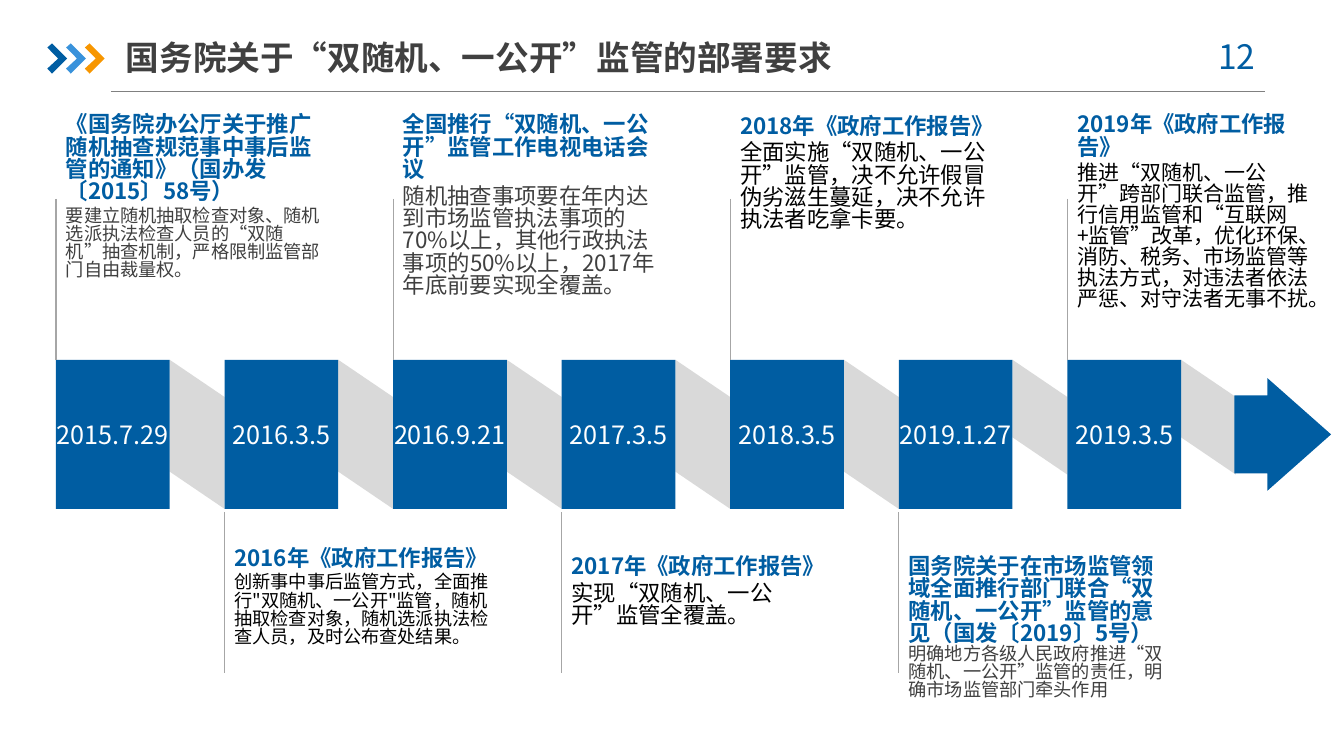
import pptx
import pptx.util
import pptx.dml.color
import pptx.enum.text
import pptx.enum.shapes
import pptx.oxml.ns
from lxml import etree

Pt = pptx.util.Pt
RGB = pptx.dml.color.RGBColor
SHAPE = pptx.enum.shapes.MSO_SHAPE
ALIGN = pptx.enum.text.PP_ALIGN
ANCHOR = pptx.enum.text.MSO_ANCHOR
qn = pptx.oxml.ns.qn

BLUE = RGB(0x00, 0x5D, 0xA2)
SKY = RGB(0x39, 0x92, 0xDB)
ORANGE = RGB(0xF7, 0x96, 0x00)
BAND = RGB(0xD9, 0xD9, 0xD9)
RULE = RGB(0x80, 0x80, 0x80)
STEM = RGB(0xA6, 0xA6, 0xA6)
DARK = RGB(0x40, 0x40, 0x40)
BLACK = RGB(0x00, 0x00, 0x00)
WHITE = RGB(0xFF, 0xFF, 0xFF)
FONT = "Noto Sans CJK SC"

TITLE = "国务院关于“双随机、一公开”监管的部署要求"
PAGE = "12"

# date, heading, body, body size, body colour, note (top, width, height), body on its own line
EVENTS = [
    ("2015.7.29", "《国务院办公厅关于推广随机抽查规范事中事后监管的通知》（国办发〔2015〕58号）",
     "要建立随机抽取检查对象、随机选派执法检查人员的“双随机”抽查机制，严格限制监管部门自由裁量权。",
     13, DARK, (77, 201.6, 170), True),
    ("2016.3.5", "2016年《政府工作报告》",
     "创新事中事后监管方式，全面推行\"双随机、一公开\"监管，随机抽取检查对象，"
     "随机选派执法检查人员，及时公布查处结果。",
     13, BLACK, (386.6, 201.6, 147.6), True),
    ("2016.9.21", "全国推行“双随机、一公开”监管工作电视电话会议",
     "随机抽查事项要在年内达到市场监管执法事项的70%以上，其他行政执法事项的50%以上，"
     "2017年年底前要实现全覆盖。",
     16, DARK, (77, 201.6, 98.6), True),
    ("2017.3.5", "2017年《政府工作报告》",
     "实现“双随机、一公开”监管全覆盖。",
     16, BLACK, (392.4, 201.6, 141.8), True),
    ("2018.3.5", "2018年《政府工作报告》",
     "全面实施“双随机、一公开”监管，决不允许假冒伪劣滋生蔓延，决不允许执法者吃拿卡要。",
     16, BLACK, (77.8, 201.6, 108), True),
    ("2019.1.27", "国务院关于在市场监管领域全面推行部门联合“双随机、一公开”监管的意见（国发〔2019〕5号）",
     "明确地方各级人民政府推进“双随机、一公开”监管的责任，明确市场监管部门牵头作用",
     13, DARK, (392.4, 199, 131.8), False),
    ("2019.3.5", "2019年《政府工作报告》",
     "推进“双随机、一公开”跨部门联合监管，推行信用监管和“互联网+监管”改革，优化环保、"
     "消防、税务、市场监管等执法方式，对违法者依法严惩、对守法者无事不扰。",
     15, BLACK, (77, 183.6, 103), True),
]

LEFT, STEP = 40, 120.4
TOP, WIDE, HIGH = 257, 81.2, 106.5
DROP = 26.6
CHEVRON = [(0, 3), (3.4, 0), (14.2, 10.8), (3.4, 21.6), (0, 18), (7.8, 10.8)]

deck = pptx.Presentation()
deck.slide_width, deck.slide_height = Pt(960), Pt(540)
slide = deck.slides.add_slide(deck.slide_layouts[5])
shapes = slide.shapes


def paint(shape, color):
    shape.shadow.inherit = False
    shape.fill.solid()
    shape.fill.fore_color.rgb = color
    shape.line.fill.background()


def outline(points, color):
    """Draw a closed filled polygon from points."""
    spots = [(Pt(x), Pt(y)) for x, y in points]
    pen = shapes.build_freeform(*spots[0])
    pen.add_line_segments(spots[1:], close=True)
    paint(pen.convert_to_shape(), color)


def line(x1, y1, x2, y2, color):
    rule = shapes.add_connector(pptx.enum.shapes.MSO_CONNECTOR.STRAIGHT,
                                Pt(x1), Pt(y1), Pt(x2), Pt(y2))
    rule.line.color.rgb = color
    rule.line.width = Pt(0.75)
    etree.SubElement(rule._element.spPr, qn("a:effectLst"))


def write(para, text, size, color, bold=False):
    run = para.add_run()
    run.text = text
    for key, value in {"size": Pt(size), "bold": bold, "name": FONT}.items():
        setattr(run.font, key, value)
    run.font.color.rgb = color
    east = etree.SubElement(run.font._element, qn("a:ea"))
    east.set("typeface", FONT)


def setup(frame, **values):
    for key, value in values.items():
        setattr(frame, key, value)


def place(shape, x, y, w, h):
    shape.left, shape.top, shape.width, shape.height = map(Pt, (x, y, w, h))


def note(x, head, body, size, color, box, split):
    """Add a heading and its body text beside a stem."""
    y, w, h = box
    frame = shapes.add_textbox(Pt(x), Pt(y), Pt(w), Pt(h)).text_frame
    setup(frame, word_wrap=True, margin_top=Pt(5.2))
    para = frame.paragraphs[0]
    para.line_spacing = 0.83
    write(para, head, 16, BLUE, True)
    if split:
        para = frame.add_paragraph()
        para.line_spacing = 0.83
        para.space_before = Pt(0.2 * size)
    write(para, body, size, color)


# header
line(79.2, 65.5, 903.6, 65.5, RULE)
for i, color in enumerate((BLUE, SKY, ORANGE)):
    outline([(33.8 + 13.4 * i + x, 31 + y) for x, y in CHEVRON], color)

title = shapes.title
place(title, 90, 20.9, 548.6, 39.6)
setup(title.text_frame, word_wrap=True, margin_left=0, margin_right=0,
      vertical_anchor=ANCHOR.MIDDLE, auto_size=pptx.enum.text.MSO_AUTO_SIZE.NONE)
title.text_frame.paragraphs[0].alignment = ALIGN.LEFT
write(title.text_frame.paragraphs[0], TITLE, 24, DARK, True)

page = shapes.add_textbox(Pt(848), Pt(22), Pt(70.6), Pt(36))
page.text_frame.word_wrap = True
page.text_frame.paragraphs[0].alignment = ALIGN.CENTER
write(page.text_frame.paragraphs[0], PAGE, 24, BLUE)

# timeline
for i, (date, *words) in enumerate(EVENTS):
    x = LEFT + STEP * i
    start, end = x + WIDE, x + STEP
    side = 55.4 if i >= 5 else HIGH - DROP
    outline([(start, TOP), (end, TOP + DROP), (end, TOP + DROP + side),
             (start, TOP + side)], BAND)

    block = shapes.add_shape(SHAPE.RECTANGLE, Pt(x), Pt(TOP), Pt(WIDE), Pt(HIGH))
    paint(block, BLUE)
    setup(block.text_frame, word_wrap=False, margin_left=0, margin_right=0,
          vertical_anchor=ANCHOR.MIDDLE)
    block.text_frame.paragraphs[0].alignment = ALIGN.CENTER
    write(block.text_frame.paragraphs[0], date, 18, WHITE)

    stem = 366 if i % 2 else 142
    line(x, stem, x, stem + 115, STEM)
    note(x, *words)

arrow = shapes.add_shape(SHAPE.RIGHT_ARROW, Pt(LEFT + STEP * len(EVENTS) - 1), Pt(270),
                         Pt(69), Pt(80.6))
arrow.adjustments[0], arrow.adjustments[1] = 0.69, 0.66
paint(arrow, BLUE)

deck.save("out.pptx")
